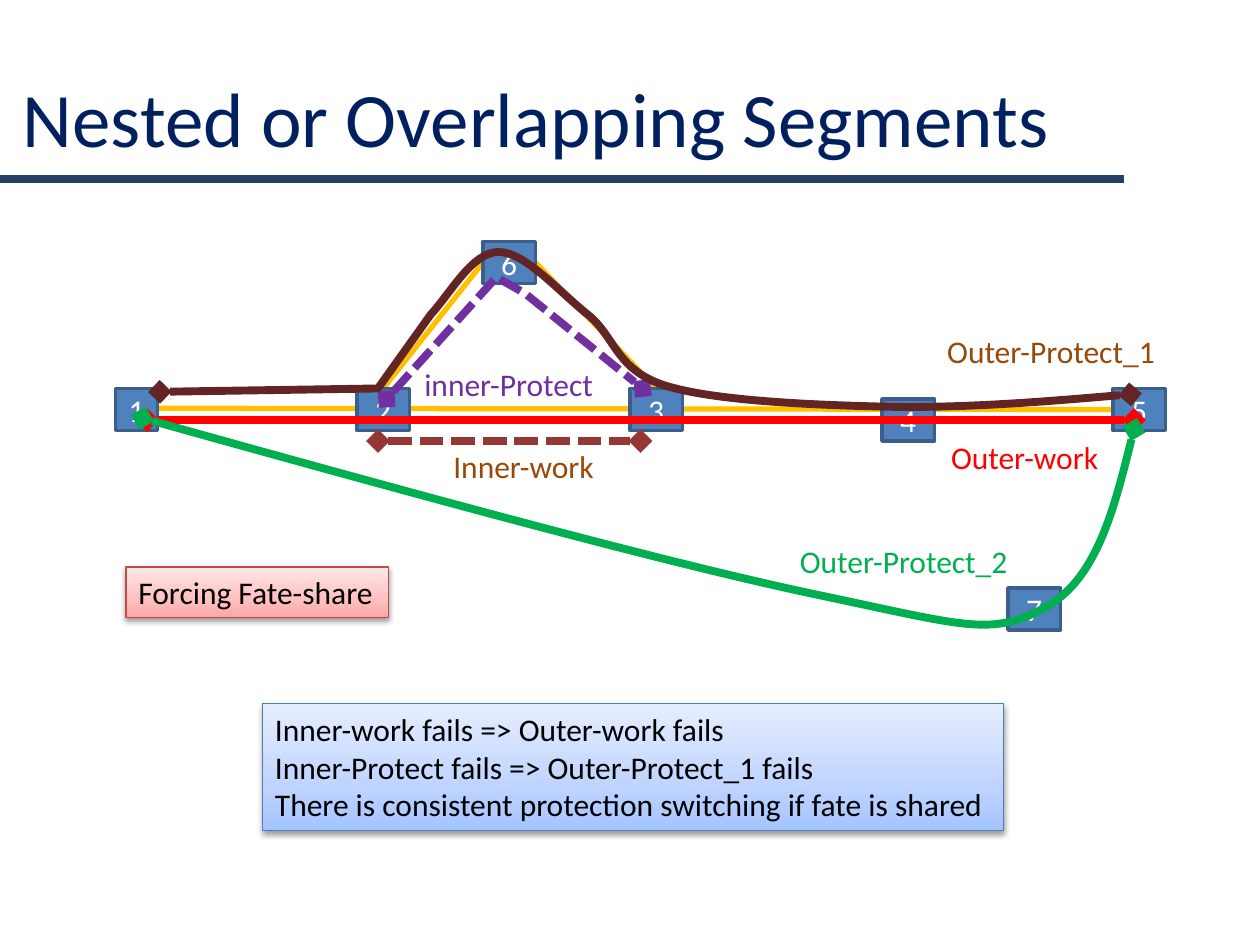
import copy

import pptx
import pptx.dml.color
import pptx.enum.dml
import pptx.enum.shapes
import pptx.enum.text
import pptx.oxml
import pptx.oxml.ns
import pptx.util

Pt = pptx.util.Pt
qn = pptx.oxml.ns.qn
MSO_ANCHOR = pptx.enum.text.MSO_ANCHOR
PP_ALIGN = pptx.enum.text.PP_ALIGN
RECT = pptx.enum.shapes.MSO_SHAPE.RECTANGLE
STRAIGHT = pptx.enum.shapes.MSO_CONNECTOR.STRAIGHT
DASH = pptx.enum.dml.MSO_LINE.SQUARE_DOT


def rgb(value):
    return pptx.dml.color.RGBColor.from_string(value)


def write(tf, text, size=18, color="000000", align=PP_ALIGN.LEFT,
          anchor=MSO_ANCHOR.TOP, wrap=False, grow=False):
    tf.word_wrap = wrap
    tf.vertical_anchor = anchor
    if grow:
        tf.auto_size = pptx.enum.text.MSO_AUTO_SIZE.SHAPE_TO_FIT_TEXT
    for i, line in enumerate(text.split("\n")):
        p = tf.paragraphs[0] if i == 0 else tf.add_paragraph()
        p.alignment = align
        r = p.add_run()
        r.text = line
        r.font.name = "Calibri"
        r.font.size = Pt(size)
        r.font.color.rgb = rgb(color)


def add_text(s, box, text, **fmt):
    write(s.shapes.add_textbox(*map(Pt, box)).text_frame, text, **fmt)


def add_box(s, box, line, width):
    sp = s.shapes.add_shape(RECT, *map(Pt, box))
    sp.shadow.inherit = False
    sp.line.color.rgb = rgb(line)
    sp.line.width = Pt(width)
    return sp


def style_line(sp, color, width, dash=False, ends=False):
    sp.line.color.rgb = rgb(color)
    sp.line.width = Pt(width)
    if dash:
        sp.line.dash_style = DASH
    if ends:
        for tag in ("a:headEnd", "a:tailEnd"):
            pptx.oxml.ns.qn(tag)
            end = sp.line._ln.makeelement(qn(tag), {"type": "diamond"})
            sp.line._ln.append(end)


def add_line(s, start, end, color, width, **fmt):
    sp = s.shapes.add_connector(STRAIGHT, *map(Pt, start + end))
    style_line(sp, color, width, **fmt)
    props = sp._element.spPr
    props.append(props.makeelement(qn("a:effectLst"), {}))


def add_path(s, box, points, color, width, straight=None, **fmt):
    pts = [(Pt(box[0] + x), Pt(box[1] + y)) for x, y in points]
    fb = s.shapes.build_freeform(*pts[0], scale=1.0)
    fb.add_line_segments(pts[1:], close=False)
    sp = fb.convert_to_shape()
    sp.shadow.inherit = False
    sp.fill.background()
    style_line(sp, color, width, **fmt)
    if straight is not None:
        segments = list(sp._element.iter(qn("a:lnTo")))[straight:]
        path = segments[0].getparent()
        for i in range(0, len(segments), 3):
            curve = path.makeelement(qn("a:cubicBezTo"), {})
            path.append(curve)
            for segment in segments[i:i + 3]:
                curve.append(segment[0])
                path.remove(segment)


def add_callout(s, box, text, stops, line):
    sp = add_box(s, box, line, 0.75)
    sp.fill.gradient()
    gs = sp.fill._xPr.find(qn("a:gradFill")).find(qn("a:gsLst"))
    gs.insert(1, copy.deepcopy(gs[0]))
    for stop, position, color in zip(sp.fill.gradient_stops, (0, 0.35, 1), stops):
        stop.position = position
        stop.color.rgb = rgb(color)
    sp.fill.gradient_angle = 90
    effects = sp._element.spPr.find(qn("a:effectLst"))
    effects.append(pptx.oxml.parse_xml(
        '<a:outerShdw xmlns:a="http://schemas.openxmlformats.org/drawingml/2006/main" '
        f'blurRad="{Pt(3.1)}" dist="{Pt(1.6)}" dir="5400000" rotWithShape="0">'
        '<a:srgbClr val="000000"><a:alpha val="38000"/></a:srgbClr></a:outerShdw>'))
    write(sp.text_frame, text, grow=True)


def add_header(s, box):
    x, y, w, h = box
    add_line(s, (0, y + 80.6), (642.2, y + 80.6), "254061", 4.5)
    add_text(s, (x, y, w, h), "Nested or Overlapping Segments", size=44,
             color="002060", anchor=MSO_ANCHOR.MIDDLE, wrap=True)


def add_network(s, box):
    x, y = box[:2]

    def at(dx, dy):
        return x + dx, y + dy

    add_path(s, box, [(23, 95.3), (572.6, 96)], "FFC000", 3)
    add_line(s, at(210, 12), at(153, 84), "FFC000", 3)
    add_line(s, at(240, 12), at(309, 84), "FFC000", 3)

    nodes = [(0, 84, 24), (138, 84, 30), (294, 84, 30), (438, 90, 30),
             (570, 84, 30), (210, 0, 30), (510, 198, 30)]
    for number, (dx, dy, w) in enumerate(nodes, 1):
        sp = add_box(s, (*at(dx, dy), w, 24), "3A5F8C", 2)
        sp.fill.solid()
        sp.fill.fore_color.rgb = rgb("4F81BD")
        write(sp.text_frame, str(number), color="FFFFFF", align=PP_ALIGN.CENTER,
              anchor=MSO_ANCHOR.MIDDLE, wrap=True)

    inner_protect = [(155, 90), (217.7, 20.4), (234.2, 29.8), (301.2, 84)]
    outer_protect_1 = [
        (25.4, 85.9), (150, 84), (180, 42),
        (192.5, 28.3), (204, 6), (219.1, 6),
        (234.2, 6), (253.7, 29), (270.2, 42),
        (286.1, 55), (286.1, 74.4), (316.3, 83),
        (346.6, 91.7), (406.3, 93.8), (450.2, 94.6),
        (494.2, 94.6), (537.4, 91), (579.8, 87.4)]
    outer_protect_2 = [
        (582, 107.5), (571.2, 150.7), (560.4, 193.9), (530.2, 209.8),
        (499.9, 225.6), (486.2, 219.8), (400.6, 201.8),
        (314.9, 183.8), (165.1, 142.8), (15.4, 101)]
    add_path(s, box, inner_protect, "7030A0", 4.5, dash=True, ends=True)
    add_line(s, at(18, 102), at(582, 102), "FF0000", 4.5, ends=True)
    add_path(s, box, outer_protect_1, "632523", 4.5, straight=2, ends=True)
    add_line(s, at(150, 114), at(300, 114), "953735", 4.5, dash=True, ends=True)
    add_path(s, box, outer_protect_2, "00B050", 4.5, straight=0, ends=True)

    for text, dx, dy, w, color in [
            ("Inner-work", 186, 114, 96.5, "984807"),
            ("Outer-work", 470.4, 109, 100, "FF0000"),
            ("Outer-Protect_1", 468.2, 48, 134.6, "984807"),
            ("inner-Protect", 169.4, 67.2, 112.3, "7030A0"),
            ("Outer-Protect_2", 384, 168, 134.6, "00B050")]:
        add_text(s, (*at(dx, dy), w, 29), text, color=color, grow=True)


def main():
    prs = pptx.Presentation()
    prs.slide_width, prs.slide_height = Pt(720), Pt(540)
    s = prs.slides.add_slide(prs.slide_layouts[6])
    add_header(s, (6, 21.6, 648, 90))
    add_network(s, (66, 138, 600, 226))
    add_callout(s, (150, 402, 423.4, 72.7),
                "Inner-work fails => Outer-work fails\n"
                "Inner-Protect fails => Outer-Protect_1 fails\n"
                "There is consistent protection switching if fate is shared",
                ("A4C4FF", "BFD4FF", "E6EEFF"), "4B7EBC")
    add_callout(s, (72, 324, 150, 29), "Forcing Fate-share",
                ("FFA6A5", "FFC0BF", "FFE7E7"), "BF4C48")
    prs.save("out.pptx")


if __name__ == "__main__":
    main()
